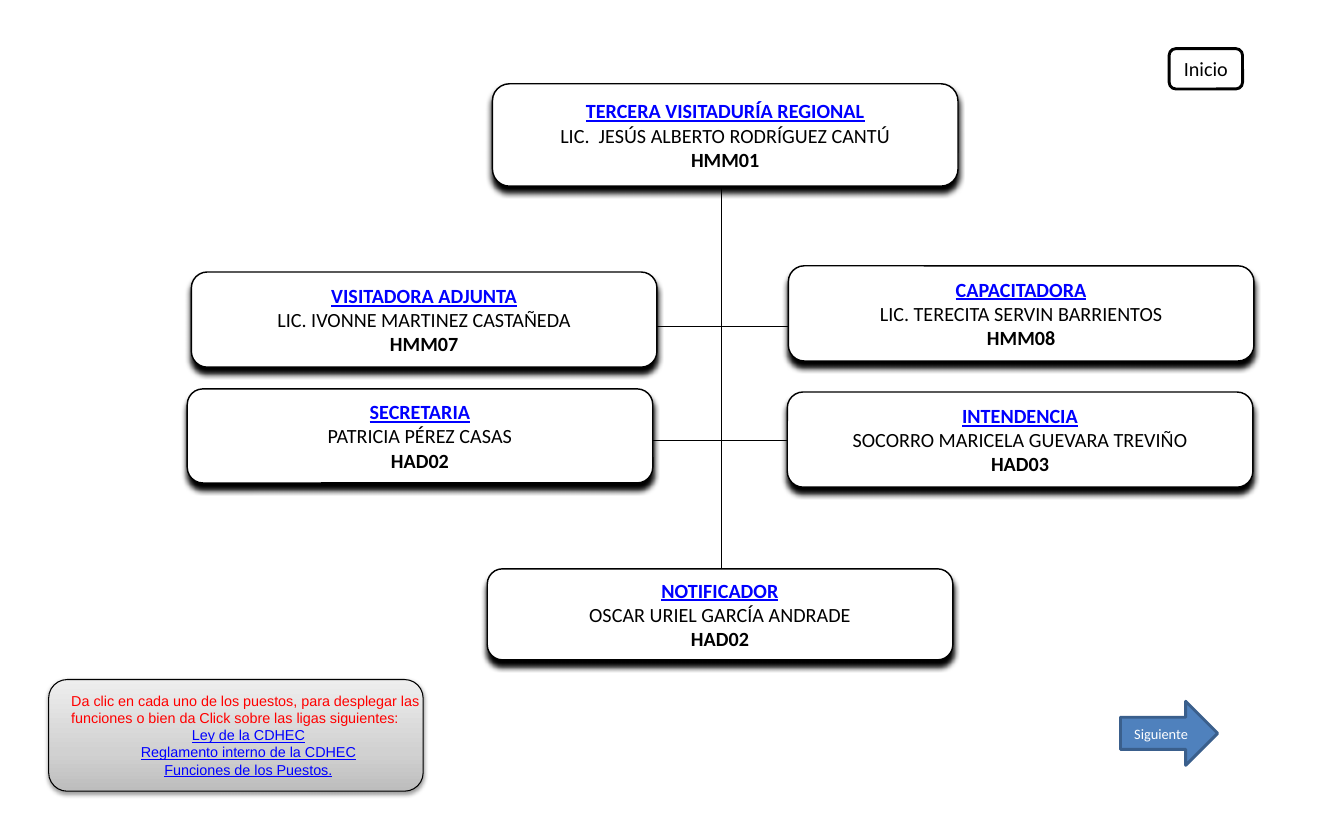
from copy import deepcopy

from lxml import etree
from pptx import Presentation
from pptx.dml.color import RGBColor
from pptx.enum import shapes, text
from pptx.oxml import ns
from pptx.util import Inches, Pt

COLORS = {
    "black": "000000", "white": "FFFFFF", "link": "0000FF", "red": "FF0000",
    "arrow": "4F81BD", "arrow_line": "3A5F8C",
}
GRADIENT = [(0, "BDBDBD"), (0.35, "D1D1D1"), (1, "EEEEEE")]
ROUNDED = shapes.MSO_SHAPE.ROUNDED_RECTANGLE
CENTER = text.PP_ALIGN.CENTER
LEFT = text.PP_ALIGN.LEFT

POSTS = [
    (4.76, 0.81, 0.99, "TERCERA VISITADURÍA REGIONAL", "LIC.  JESÚS ALBERTO RODRÍGUEZ CANTÚ", "HMM01"),
    (1.85, 2.63, 0.92, "VISITADORA ADJUNTA", "LIC. IVONNE MARTINEZ CASTAÑEDA", "HMM07"),
    (1.81, 3.76, 0.91, "SECRETARIA", "PATRICIA PÉREZ CASAS", "HAD02"),
    (7.61, 3.79, 0.92, "INTENDENCIA", "SOCORRO MARICELA GUEVARA TREVIÑO", "HAD03"),
    (7.62, 2.57, 0.92, "CAPACITADORA", "LIC. TERECITA SERVIN BARRIENTOS", "HMM08"),
    (4.71, 5.5, 0.88, "NOTIFICADOR", "OSCAR URIEL GARCÍA ANDRADE", "HAD02"),
]
LINES = [
    (6.97, 1.75, 6.97, 5.5),
    (5.87, 3.16, 6.97, 3.16),
    (6.97, 3.16, 8.07, 3.16),
    (6.31, 4.26, 6.97, 4.26),
    (6.72, 4.26, 7.82, 4.26),
]
LINKS = ["Ley de la CDHEC", "Reglamento interno de la CDHEC", "Funciones de los Puestos."]


def rgb(name):
    """Return the colour stored under a name."""
    return RGBColor.from_string(COLORS[name])


def add_line(slide, x1, y1, x2, y2):
    """Draw a thin black line of the chart."""
    line = slide.shapes.add_connector(
        shapes.MSO_CONNECTOR.STRAIGHT, Inches(x1), Inches(y1), Inches(x2), Inches(y2))
    line.line.color.rgb = rgb("black")
    line.line.width = Pt(0.75)
    etree.SubElement(line._element.spPr, ns.qn("a:effectLst"))


def add_box(slide, kind, left, top, width, height, fill, line, weight):
    """Add a filled, outlined shape without a shadow."""
    shape = slide.shapes.add_shape(kind, Inches(left), Inches(top), Inches(width), Inches(height))
    shape.shadow.inherit = False
    shape.fill.solid()
    shape.fill.fore_color.rgb = rgb(fill)
    shape.line.color.rgb = rgb(line)
    shape.line.width = Pt(weight)
    shape.text_frame.vertical_anchor = text.MSO_ANCHOR.MIDDLE
    return shape


def add_shadow(shape, opacity, blur, distance):
    """Give a shape a black shadow that falls downwards."""
    effects = shape._element.spPr.find(ns.qn("a:effectLst"))
    shadow = etree.SubElement(
        effects, ns.qn("a:outerShdw"), blurRad=str(Pt(blur)), dist=str(Pt(distance)),
        dir="5400000", algn="ctr", rotWithShape="0")
    color = etree.SubElement(shadow, ns.qn("a:srgbClr"), val=COLORS["black"])
    etree.SubElement(color, ns.qn("a:alpha"), val=str(opacity * 1000))


def add_gradient(shape):
    """Fill a shape with the grey gradient, darkest at the bottom."""
    shape.fill.gradient()
    shape.fill.gradient_angle = 90
    stop_list = shape._element.spPr.find(".//" + ns.qn("a:gsLst"))
    stop_list.append(deepcopy(stop_list[-1]))
    for stop, (position, color) in zip(shape.fill.gradient_stops, GRADIENT):
        stop.position = position
        stop.color.rgb = RGBColor.from_string(color)


def write(frame, lines, size, font):
    """Write one paragraph for each (words, colour, bold, underline, alignment)."""
    for index, (words, color, bold, underline, alignment) in enumerate(lines):
        paragraph = frame.add_paragraph() if index else frame.paragraphs[0]
        paragraph.alignment = alignment
        run = paragraph.add_run()
        run.text = words
        run.font.size = Pt(size)
        run.font.name = font
        run.font.bold = bold
        run.font.underline = underline
        run.font.color.rgb = rgb(color)


def add_post(slide, left, top, height, post, person, code):
    """Add the card of one post with its holder and code."""
    card = add_box(slide, ROUNDED, left, top, 4.5, height, "white", "black", 1)
    add_shadow(card, 100, 4, 4)
    frame = card.text_frame
    frame.word_wrap = False
    frame.margin_left = frame.margin_right = Inches(0.17)
    frame.margin_top = frame.margin_bottom = Inches(0.09)
    write(frame, [
        (post, "link", True, True, CENTER),
        (person, "black", False, False, CENTER),
        (code, "black", True, False, CENTER),
    ], 14, "Calibri")


def add_button(slide, kind, box, colors, words, size):
    """Add a navigation button with a centred label."""
    fill, line, label = colors
    button = add_box(slide, kind, *box, fill, line, 2)
    write(button.text_frame, [(words, label, False, False, CENTER)], size, "Calibri")


def add_help(slide):
    """Add the grey panel with the instructions and links."""
    panel = add_box(slide, ROUNDED, 0.47, 6.57, 3.62, 1.08, "white", "black", 0.75)
    add_gradient(panel)
    add_shadow(panel, 38, 3.1, 1.6)
    frame = slide.shapes.add_textbox(Inches(0.59), Inches(6.64), Inches(3.62), Inches(0.94)).text_frame
    frame.word_wrap = True
    frame.auto_size = text.MSO_AUTO_SIZE.SHAPE_TO_FIT_TEXT
    hint = ("Da clic en cada uno de los puestos, para desplegar las "
            "funciones o bien da Click sobre las ligas siguientes:")
    links = [(link, "link", False, True, CENTER) for link in LINKS]
    write(frame, [(hint, "red", False, False, LEFT)] + links, 10, "Arial")


def main():
    """Build the organisation chart slide."""
    presentation = Presentation()
    presentation.slide_width = Inches(12.99)
    presentation.slide_height = Inches(7.88)
    slide = presentation.slides.add_slide(presentation.slide_layouts[6])
    for line in LINES:
        add_line(slide, *line)
    for post in POSTS:
        add_post(slide, *post)
    add_button(slide, ROUNDED, (11.3, 0.47, 0.71, 0.39), ("white", "black", "black"), "Inicio", 14)
    add_help(slide)
    add_button(slide, shapes.MSO_SHAPE.RIGHT_ARROW, (10.83, 6.78, 0.94, 0.62),
               ("arrow", "arrow_line", "white"), "Siguiente", 10)
    presentation.save("out.pptx")


if __name__ == "__main__":
    main()
